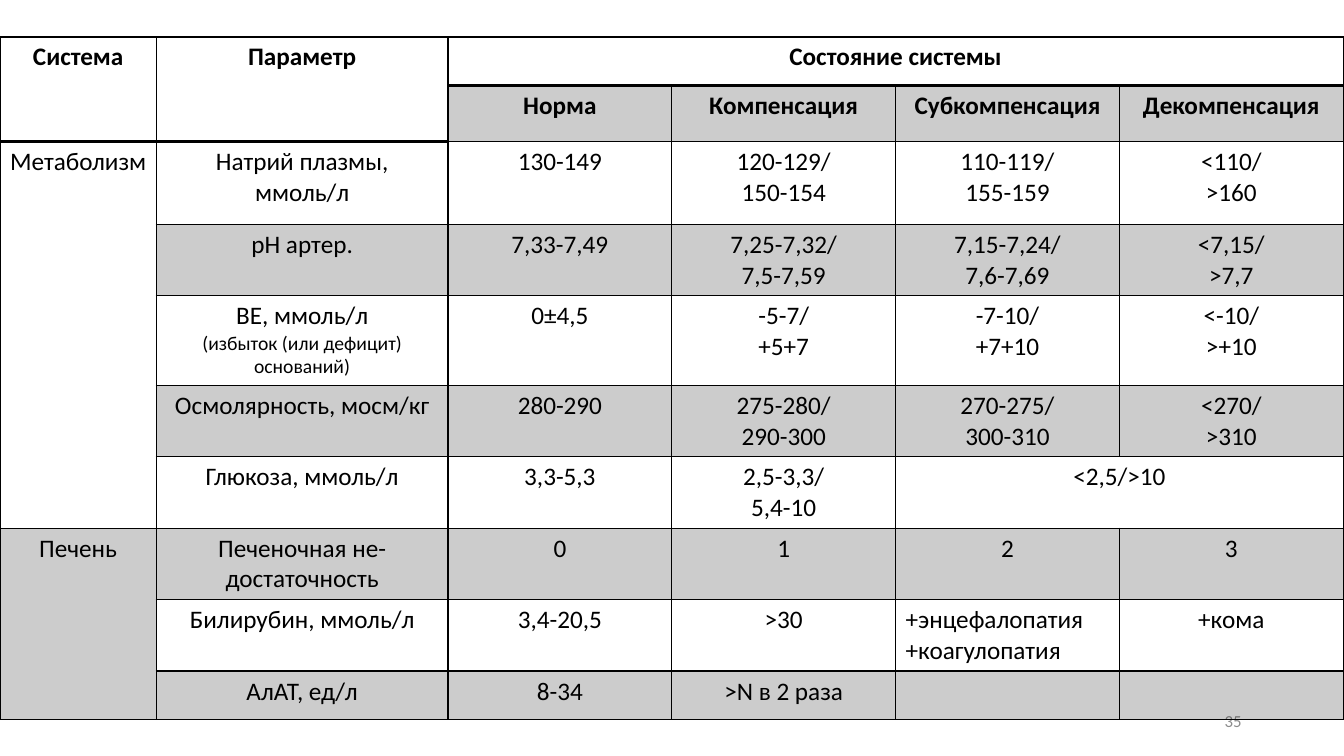
import pptx
import pptx.dml.color
import pptx.enum.text
import pptx.util
import lxml.etree
from pptx.oxml.ns import qn
from pptx.util import Cm

COLORS = {"ink": "000000", "number": "8C8C8C"}
FONT = "Calibri"
SHADE_ALPHA = 20
SLIDE_SIZE = (33.87, 19.05)
TABLE_TOP = 0.93
COLUMN_WIDTHS = [3.94, 7.35] + [5.64] * 4
ROW_HEIGHTS = [1.22, 1.42, 2.08, 1.8, 2.26, 1.8, 1.8, 1.8, 1.8, 1.22]
PAGE_NUMBER = "35"
PAGE_NUMBER_BOX = (23.92, 17.66, 7.62, 1.01)
ROWS = [
    ["Система", "Параметр", "Состояние системы", "", "", ""],
    ["", "", "Норма", "Компенсация", "Субкомпенсация", "Декомпенсация"],
    ["Метаболизм", "Натрий плазмы, ммоль/л", "130-149", "120-129/\n150-154", "110-119/\n155-159", "<110/\n>160"],
    ["", "pH артер.", "7,33-7,49", "7,25-7,32/\n7,5-7,59", "7,15-7,24/\n7,6-7,69", "<7,15/\n>7,7"],
    ["", "ВЕ, ммоль/л\n(избыток (или дефицит) оснований)", "0±4,5", "-5-7/\n+5+7", "-7-10/\n+7+10", "<-10/\n>+10"],
    ["", "Осмолярность, мосм/кг", "280-290", "275-280/\n290-300", "270-275/\n300-310", "<270/\n>310"],
    ["", "Глюкоза, ммоль/л", "3,3-5,3", "2,5-3,3/\n5,4-10", "<2,5/>10", ""],
    ["Печень", "Печеночная не-достаточность", "0", "1", "2", "3"],
    ["", "Билирубин, ммоль/л", "3,4-20,5", ">30", "+энцефалопатия\n+коагулопатия", "+кома"],
    ["", "АлАТ, ед/л", "8-34", ">N в 2 раза", "", ""],
]
MERGES = [
    ((0, 0), (1, 0)),
    ((0, 1), (1, 1)),
    ((0, 2), (0, 5)),
    ((2, 0), (6, 0)),
    ((6, 4), (6, 5)),
    ((7, 0), (9, 0)),
]
HEADER_ROWS = 2
SMALL_PREFIX = "(избыток"
LEFT_PREFIX = "+энцефалопатия"
ALIGN = pptx.enum.text.PP_ALIGN


def write_paragraph(paragraph, text, alignment, color, **font_values):
    paragraph.alignment = alignment
    run = paragraph.add_run()
    run.text = text
    run.font.color.rgb = pptx.dml.color.RGBColor.from_string(COLORS[color])
    for name, value in {"name": FONT, **font_values}.items():
        setattr(run.font, name, value)


def write_cell(cell, text, bold):
    alignment = ALIGN.LEFT if text.startswith(LEFT_PREFIX) else ALIGN.CENTER
    for index, line in enumerate(text.split("\n") if text else []):
        frame = cell.text_frame
        paragraph = frame.add_paragraph() if index else frame.paragraphs[0]
        size = 14 if line.startswith(SMALL_PREFIX) else 18
        write_paragraph(paragraph, line, alignment, "ink", size=pptx.util.Pt(size), bold=bold)


def add_solid_fill(parent):
    fill = lxml.etree.SubElement(parent, qn("a:solidFill"))
    return lxml.etree.SubElement(fill, qn("a:srgbClr"), val=COLORS["ink"])


def format_cell(cell, shaded, bottom_width):
    properties = cell._tc.get_or_add_tcPr()
    for side, width in {"L": 1, "R": 1, "T": 1, "B": bottom_width}.items():
        line = lxml.etree.SubElement(properties, qn("a:ln" + side), w=str(pptx.util.Pt(width)))
        add_solid_fill(line)
    if shaded:
        color = add_solid_fill(properties)
        lxml.etree.SubElement(color, qn("a:alpha"), val=str(SHADE_ALPHA * 1000))
    else:
        cell.fill.background()


def add_page_number(slide):
    box = slide.shapes.add_textbox(*map(Cm, PAGE_NUMBER_BOX))
    frame = box.text_frame
    frame.word_wrap = True
    frame.vertical_anchor = pptx.enum.text.MSO_ANCHOR.MIDDLE
    write_paragraph(frame.paragraphs[0], PAGE_NUMBER, ALIGN.RIGHT, "number", size=pptx.util.Pt(12))


def add_parameter_table(slide):
    table = slide.shapes.add_table(
        len(ROWS), len(COLUMN_WIDTHS), Cm(0), Cm(TABLE_TOP),
        Cm(sum(COLUMN_WIDTHS)), Cm(sum(ROW_HEIGHTS)),
    ).table
    table.first_row = False
    table.horz_banding = False
    for column, width in zip(table.columns, COLUMN_WIDTHS):
        column.width = Cm(width)
    for row, height in zip(table.rows, ROW_HEIGHTS):
        row.height = Cm(height)
    for start, end in MERGES:
        table.cell(*start).merge(table.cell(*end))
    for row_index, texts in enumerate(ROWS):
        for column_index, text in enumerate(texts):
            cell = table.cell(row_index, column_index)
            write_cell(cell, text, row_index < HEADER_ROWS)
            shaded = row_index % 2 == 1 and not cell.is_spanned
            thick = row_index == 0 or (row_index == 1 and cell.is_spanned)
            format_cell(cell, shaded, 2 if thick else 1)


def main():
    presentation = pptx.Presentation()
    presentation.slide_width, presentation.slide_height = map(Cm, SLIDE_SIZE)
    slide = presentation.slides.add_slide(presentation.slide_layouts[6])
    add_page_number(slide)
    add_parameter_table(slide)
    presentation.save("out.pptx")


if __name__ == "__main__":
    main()
